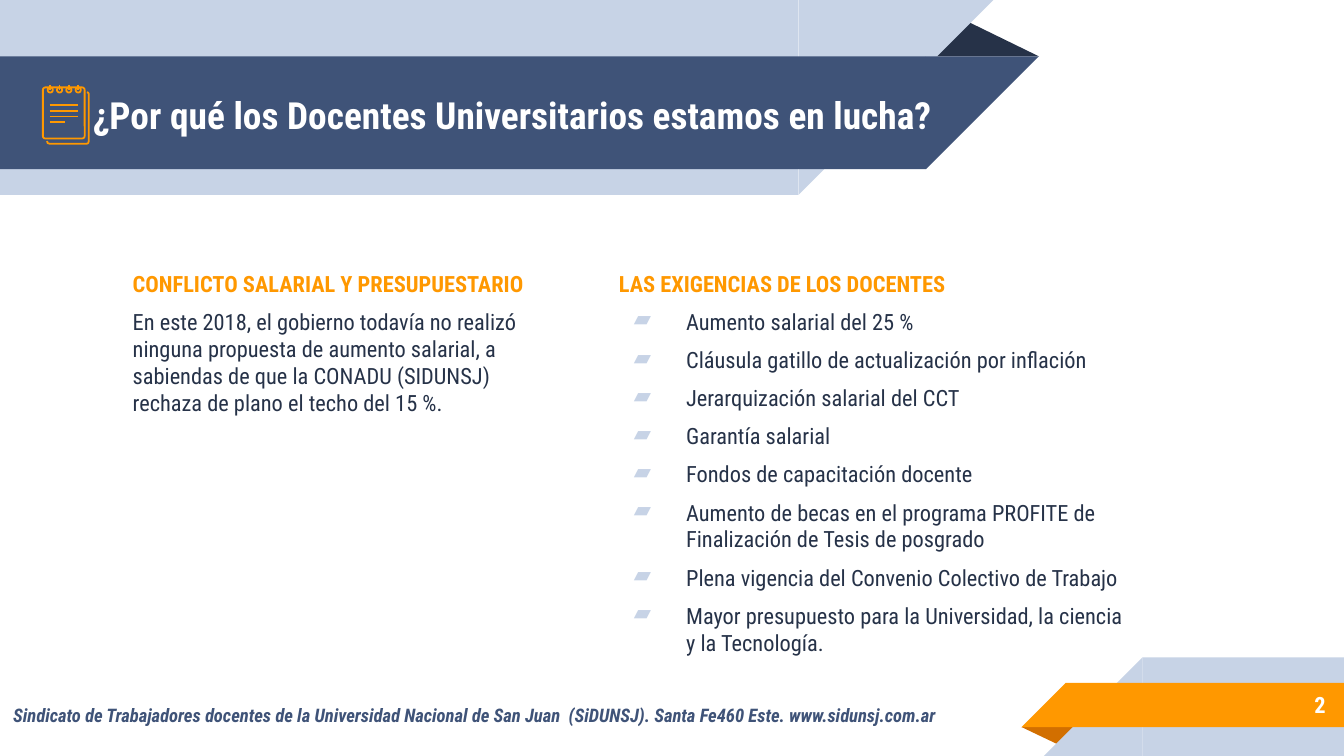
"""Builds the slide on the teachers' salary conflict and their demands."""
from lxml import etree
from pptx import Presentation
from pptx.dml.color import RGBColor
from pptx.enum.shapes import MSO_CONNECTOR, MSO_SHAPE
from pptx.enum.text import MSO_ANCHOR, MSO_AUTO_SIZE, PP_ALIGN
from pptx.oxml.ns import qn
from pptx.util import Pt

RECTANGLE = MSO_SHAPE.RECTANGLE
ROUNDED = MSO_SHAPE.ROUNDED_RECTANGLE
CORNER = MSO_SHAPE.RIGHT_TRIANGLE
TRIANGLE = MSO_SHAPE.ISOSCELES_TRIANGLE
OVAL = MSO_SHAPE.OVAL
STRAIGHT = MSO_CONNECTOR.STRAIGHT
TOP, MIDDLE = MSO_ANCHOR.TOP, MSO_ANCHOR.MIDDLE
LEFT, RIGHT = PP_ALIGN.LEFT, PP_ALIGN.RIGHT
NO_FIT = MSO_AUTO_SIZE.NONE

FONT = "Roboto Condensed"
COLORS = {
    "ink": "263248",
    "navy": "3F5378",
    "pale": "C7D3E6",
    "orange": "FF9800",
    "rust": "D26F00",
    "white": "FFFFFF",
}
ICON_LINE = 0.96
FOLD_APEX = 0.324

TITLE = "¿Por qué los Docentes Universitarios estamos en lucha?"
CONFLICT_HEADING = "CONFLICTO SALARIAL Y PRESUPUESTARIO"
CONFLICT = (
    "En este 2018, el gobierno todavía no realizó ninguna propuesta de aumento "
    "salarial, a sabiendas de que la CONADU (SIDUNSJ) rechaza de plano el techo del 15 %."
)
DEMANDS_HEADING = "LAS EXIGENCIAS DE LOS DOCENTES"
DEMANDS = [
    "Aumento salarial del 25 %",
    "Cláusula gatillo de actualización por inflación",
    "Jerarquización salarial del CCT",
    "Garantía salarial",
    "Fondos de capacitación docente",
    "Aumento de becas en el programa PROFITE de Finalización de Tesis de posgrado",
    "Plena vigencia del Convenio Colectivo de Trabajo",
    "Mayor presupuesto para la Universidad, la ciencia y la Tecnología.",
]
FOOTER = (
    "Sindicato de Trabajadores docentes de la Universidad Nacional de San Juan  "
    "(SiDUNSJ). Santa Fe460 Este. www.sidunsj.com.ar"
)


def rgb(name):
    """Return the named colour."""
    return RGBColor.from_string(COLORS[name])


def add_filled(slide, kind, box, color, rotation=0):
    """Add a preset shape with a plain fill and no line."""
    shape = slide.shapes.add_shape(kind, *map(Pt, box))
    shape.shadow.inherit = False
    shape.fill.solid()
    shape.fill.fore_color.rgb = rgb(color)
    shape.line.fill.background()
    shape.rotation = rotation
    return shape


def add_fold(slide, box, color, rotation=0):
    """Add the small triangle behind a folded band."""
    fold = add_filled(slide, TRIANGLE, box, color, rotation)
    fold.adjustments[0] = FOLD_APEX


def add_top_band(slide, top, width, height, color):
    """Add a band from the left edge with a slanted right end."""
    add_filled(slide, RECTANGLE, (0, top, width, height), color)
    add_filled(slide, CORNER, (width, top, height, height), color, 90)


def add_bottom_band(slide, left, top, height, color):
    """Add a band to the right edge with a slanted left end."""
    add_filled(slide, RECTANGLE, (left, top, 720 - left, height), color)
    add_filled(slide, CORNER, (left - height, top, height, height), color, 270)


def outline(shape):
    """Give an icon part its orange line and no fill."""
    shape.shadow.inherit = False
    shape.fill.background()
    shape.line.color.rgb = rgb("orange")
    shape.line.width = Pt(ICON_LINE)


def add_stroke(slide, *ends):
    """Add a straight icon line between two points."""
    connector = slide.shapes.add_connector(STRAIGHT, *map(Pt, ends))
    connector.line.color.rgb = rgb("orange")
    connector.line.width = Pt(ICON_LINE)
    etree.SubElement(connector._element.spPr, qn("a:effectLst"))


def add_notepad(slide):
    """Draw the spiral notepad icon."""
    edge = [(25.2, 75.6), (25.6, 76.7), (26.6, 77), (46.5, 77), (47.3, 76.7),
            (47.6, 75.6), (47.6, 50.4), (47.3, 49.7), (46.6, 49.4)]
    points = [(Pt(x), Pt(y)) for x, y in edge]
    builder = slide.shapes.build_freeform(*points[0])
    builder.add_line_segments(points[1:], close=False)
    outline(builder.convert_to_shape())

    page = slide.shapes.add_shape(ROUNDED, Pt(23), Pt(46.8), Pt(22.4), Pt(27.4))
    page.adjustments[0] = 0.06
    outline(page)

    for index in range(4):
        center = 26.9 + 5 * index
        ring = slide.shapes.add_shape(OVAL, Pt(center - 1.4), Pt(46.8), Pt(2.8), Pt(2.8))
        outline(ring)
        add_stroke(slide, center, 45.4, center, 48.2)
        line_top = 56.2 + 3.1 * index
        add_stroke(slide, 26.6, line_top, 34.6 if index == 3 else 41.8, line_top)


def add_bullet(paragraph):
    """Give a paragraph a hanging slanted-block bullet."""
    properties = paragraph._p.get_or_add_pPr()
    properties.set("marL", str(Pt(36)))
    properties.set("indent", str(Pt(-28)))
    bullet_color = etree.SubElement(properties, qn("a:buClr"))
    etree.SubElement(bullet_color, qn("a:srgbClr"), val=COLORS["pale"])
    etree.SubElement(properties, qn("a:buChar"), char="▰")


def write(paragraph, text, size=12, color="ink", bold=False, italic=False,
          align=LEFT, before=0, bullet=False):
    """Write formatted text into a paragraph."""
    paragraph.alignment = align
    paragraph.space_before = Pt(before)
    if bullet:
        add_bullet(paragraph)
    run = paragraph.add_run()
    run.text = text
    run.font.name = FONT
    run.font.size = Pt(size)
    run.font.bold = bold
    run.font.italic = italic
    run.font.color.rgb = rgb(color)


def prepare_frame(shape, anchor=TOP):
    """Set wrapping, insets and anchor, and return the text frame."""
    frame = shape.text_frame
    frame.word_wrap = True
    frame.auto_size = NO_FIT
    frame.vertical_anchor = anchor
    frame.margin_left = frame.margin_right = Pt(7.2)
    frame.margin_top = frame.margin_bottom = Pt(7.2)
    return frame


def add_line_box(slide, box, text, anchor=TOP, **style):
    """Add a text box with one paragraph."""
    frame = prepare_frame(slide.shapes.add_textbox(*map(Pt, box)), anchor)
    write(frame.paragraphs[0], text, **style)


def add_column(slide, box, heading, texts, bullet=False):
    """Add a text column with an orange heading."""
    frame = prepare_frame(slide.shapes.add_textbox(*map(Pt, box)))
    write(frame.paragraphs[0], heading, color="orange", bold=True, before=6)
    for text in texts:
        write(frame.add_paragraph(), text, before=6, bullet=bullet)


def place_title(slide):
    """Move the title onto its band, in front of it, and write it."""
    title = slide.shapes.title
    title.left, title.top, title.width, title.height = map(Pt, (42.5, 31, 466, 60.5))
    title._element.getparent().append(title._element)
    frame = prepare_frame(title, MIDDLE)
    write(frame.paragraphs[0], TITLE, size=20, color="white", bold=True)


def main():
    """Build and save the slide."""
    presentation = Presentation()
    presentation.slide_width, presentation.slide_height = Pt(720), Pt(405)
    slide = presentation.slides.add_slide(presentation.slide_layouts[5])

    add_fold(slide, (495.4, 10, 61.2, 20.2), "ink")
    add_top_band(slide, 0, 427.8, 104.4, "pale")
    add_top_band(slide, 30.2, 496, 60.5, "navy")
    add_fold(slide, (547.2, 389.5, 31, 10), "rust", 180)
    add_bottom_band(slide, 612, 352.2, 52.8, "pale")
    add_bottom_band(slide, 571, 365.8, 23.8, "orange")

    place_title(slide)
    add_column(slide, (324.5, 137.5, 288, 206.5), DEMANDS_HEADING, DEMANDS, bullet=True)
    add_line_box(slide, (0, 370, 592.5, 35), FOOTER,
                 size=10, color="navy", bold=True, italic=True)
    add_line_box(slide, (600, 365, 117.2, 25), "2", MIDDLE,
                 color="white", bold=True, align=RIGHT)
    add_column(slide, (64, 137.5, 242.5, 138), CONFLICT_HEADING, [CONFLICT])
    add_notepad(slide)
    presentation.save("out.pptx")


if __name__ == "__main__":
    main()
